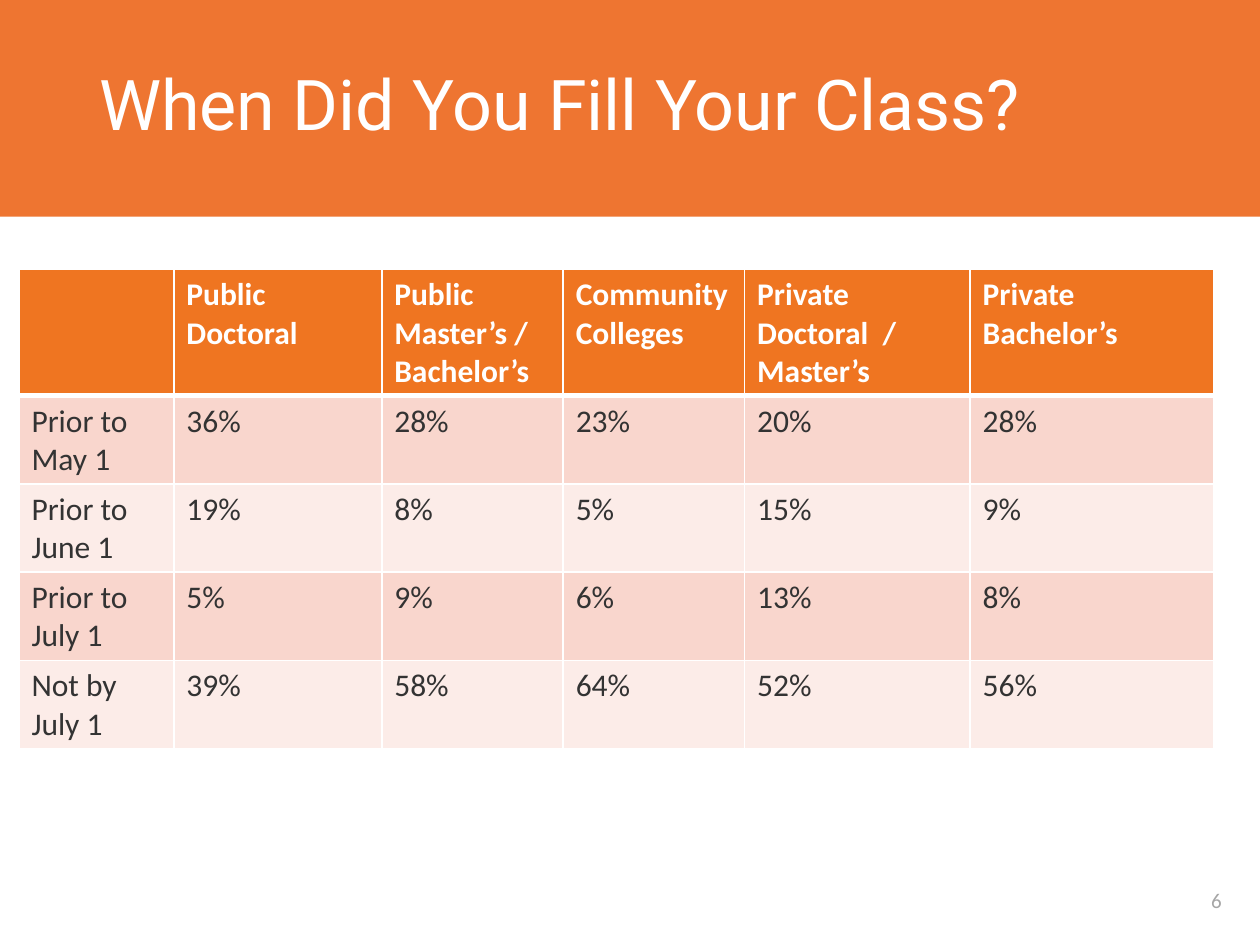
import pptx
import pptx.dml.color
import pptx.enum.shapes
import pptx.enum.text
import pptx.oxml
import pptx.oxml.ns
import pptx.util

Inches = pptx.util.Inches
Pt = pptx.util.Pt
ALIGN = pptx.enum.text.PP_ALIGN
ANCHOR = pptx.enum.text.MSO_ANCHOR

COLORS = {
    "banner": "EE7531",
    "header": "EF7521",
    "odd": "F9D6CD",
    "even": "FCECE8",
    "text": "333333",
    "number": "A6A6A6",
    "white": "FFFFFF",
}

COLUMN_WIDTHS = [1.23, 1.65, 1.44, 1.44, 1.79, 1.93]
ROW_HEIGHTS = [1.0, 0.7, 0.7, 0.7, 0.7]
ROWS = [
    ["", "Public Doctoral", "Public Master’s / Bachelor’s", "Community Colleges",
     "Private Doctoral  / Master’s", "Private Bachelor’s"],
    ["Prior to May 1", "36%", "28%", "23%", "20%", "28%"],
    ["Prior to June 1", "19%", "8%", "5%", "15%", "9%"],
    ["Prior to July 1", "5%", "9%", "6%", "13%", "8%"],
    ["Not by July 1", "39%", "58%", "64%", "52%", "56%"],
]


class SlideBuilder:
    def __init__(self, slide, body_font="Calibri"):
        self.s = slide
        self.body_font = body_font

    def color(self, name):
        return pptx.dml.color.RGBColor.from_string(COLORS[name])

    def style(self, p, size, color, font=None, bold=False):
        p.font.name = font or self.body_font
        p.font.size = Pt(size)
        p.font.bold = bold
        p.font.color.rgb = self.color(color)

    def rect(self, x, y, w, h, fill):
        sp = self.s.shapes.add_shape(
            pptx.enum.shapes.MSO_SHAPE.RECTANGLE,
            Inches(x), Inches(y), Inches(w), Inches(h))
        sp.shadow.inherit = False
        sp.fill.solid()
        sp.fill.fore_color.rgb = self.color(fill)
        sp.line.fill.background()

    def text(self, x, y, w, h, text, size, color, font=None,
             align=ALIGN.LEFT, spacing=1.0):
        sp = self.s.shapes.add_textbox(Inches(x), Inches(y), Inches(w), Inches(h))
        tf = sp.text_frame
        tf.word_wrap = True
        tf.vertical_anchor = ANCHOR.MIDDLE
        p = tf.paragraphs[0]
        p.text = text
        p.alignment = align
        p.line_spacing = spacing
        self.style(p, size, color, font)

    def borders(self, cell, widths):
        tc_pr = cell._tc.get_or_add_tcPr()
        for side, width in widths.items():
            tc_pr.append(pptx.oxml.parse_xml(
                f'<a:ln{side} {pptx.oxml.ns.nsdecls("a")} w="{Pt(width)}">'
                f'<a:solidFill><a:srgbClr val="{COLORS["white"]}"/></a:solidFill>'
                f'</a:ln{side}>'))

    def table(self, x, y, widths, heights, rows, size):
        table = self.s.shapes.add_table(
            len(rows), len(widths), Inches(x), Inches(y),
            Inches(sum(widths)), Inches(sum(heights))).table
        for column, width in zip(table.columns, widths):
            column.width = Inches(width)
        for i, (row, height) in enumerate(zip(rows, heights)):
            table.rows[i].height = Inches(height)
            header = i == 0
            fill = "header" if header else "odd" if i % 2 else "even"
            # A heavier rule separates the header from the body
            edges = {"L": 1, "R": 1, "T": 3 if i == 1 else 1, "B": 3 if header else 1}
            for j, value in enumerate(row):
                cell = table.cell(i, j)
                self.borders(cell, edges)
                cell.fill.solid()
                cell.fill.fore_color.rgb = self.color(fill)
                p = cell.text_frame.paragraphs[0]
                p.text = value
                self.style(p, size, "white" if header else "text", bold=header)


def main():
    prs = pptx.Presentation()
    prs.slide_width = Inches(10)
    prs.slide_height = Inches(7.5)
    b = SlideBuilder(prs.slides.add_slide(prs.slide_layouts[6]))

    # Title banner
    b.rect(-0.01, 0, 10.02, 1.72, "banner")
    b.text(0.69, 0, 8.62, 1.71, "When Did You Fill Your Class?", 40, "white",
           font="Roboto", spacing=0.9)

    # Share of institutions by date and sector
    b.table(0.15, 2.14, COLUMN_WIDTHS, ROW_HEIGHTS, ROWS, 18)

    # Slide number
    b.text(9.31, 6.95, 0.69, 0.39, "6", 12, "number", align=ALIGN.CENTER)

    prs.save("out.pptx")


if __name__ == "__main__":
    main()
